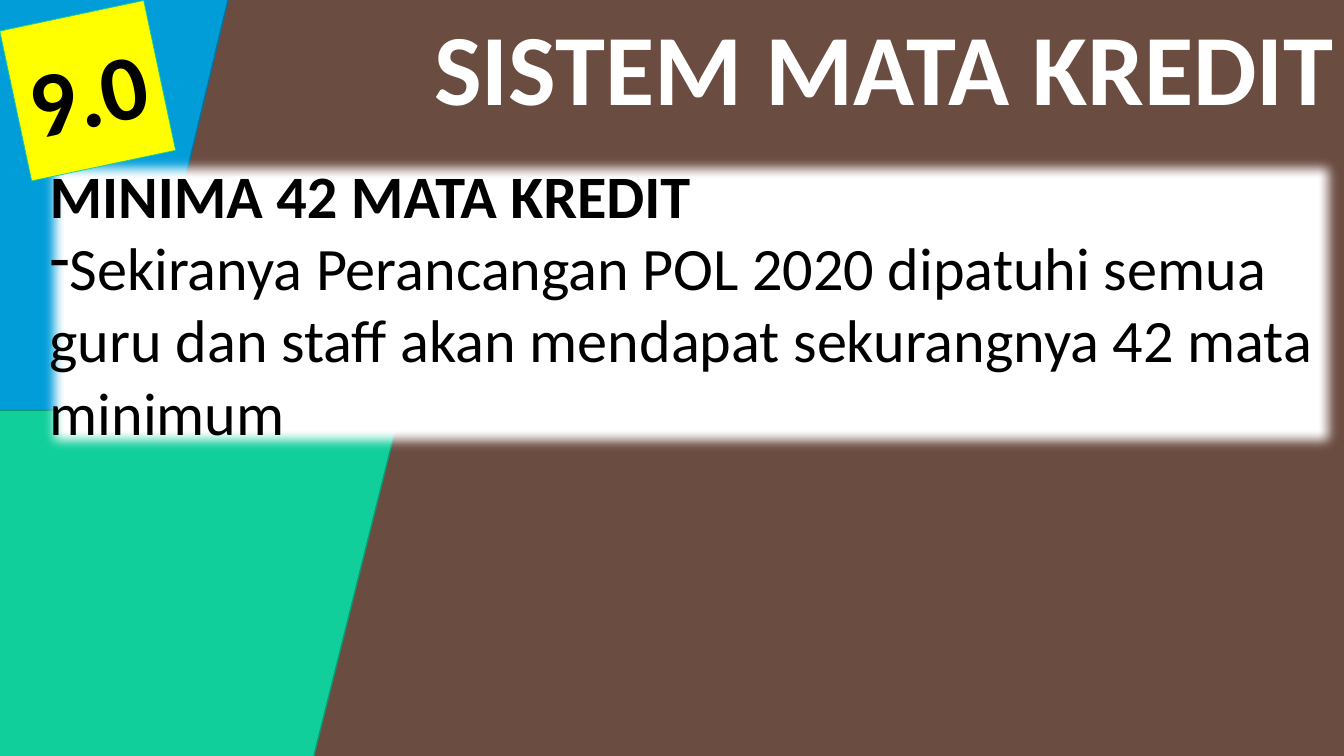
from lxml.etree import SubElement as Sub
from pptx import Presentation as Deck
from pptx.dml.color import RGBColor as Rgb
from pptx.enum.shapes import MSO_SHAPE as Kind
from pptx.enum.text import MSO_ANCHOR as Anchor, PP_ALIGN as Align
from pptx.oxml.ns import qn
from pptx.util import Inches, Pt

WIDE, HIGH = Inches(13.33), Inches(7.5)
HUE = {
    "brown": "6B4C41", "blue": "009DD9", "navy": "0074A1",
    "green": "10CF9B", "moss": "0C9973", "gold": "FFFF00",
    "white": "FFFFFF", "black": "000000",
}


def tint(name):
    return Rgb.from_string(HUE[name])


def area(left, top, width, height):
    sides = (left, WIDE), (top, HIGH), (width, WIDE), (height, HIGH)
    return [round(full * part / 100) for part, full in sides]


def block(slide, place, fill, edge=None, weight=1, kind=Kind.RECTANGLE):
    shape = slide.shapes.add_shape(kind, *area(*place))
    shape.shadow.inherit = False
    shape.fill.solid()
    shape.fill.fore_color.rgb = tint(fill)
    if edge:
        shape.line.color.rgb = tint(edge)
        shape.line.width = Pt(weight)
    else:
        shape.line.fill.background()
    return shape


def write(shape, *lines, size, color="black", align=Align.LEFT,
          anchor=Anchor.TOP, bold=1, mark=None):
    frame = shape.text_frame
    frame.word_wrap = True
    frame.vertical_anchor = anchor
    for spot, line in enumerate(lines):
        para = frame.add_paragraph() if spot else frame.paragraphs[0]
        para.alignment = align
        run = para.add_run()
        run.text = line
        font = run.font
        font.name, font.size, font.bold = "Calibri", Pt(size), spot < bold
        font.color.rgb = tint(color)
        if mark and spot >= bold:
            props = para._p.get_or_add_pPr()
            Sub(props, qn("a:buFontTx"))
            Sub(props, qn("a:buChar"), char=mark)


def soften(shape, size):
    glow = shape._element.spPr.find(qn("a:effectLst"))
    Sub(glow, qn("a:softEdge"), rad=str(Pt(size)))


def main():
    deck = Deck()
    deck.slide_width, deck.slide_height = WIDE, HIGH
    slide = deck.slides.add_slide(deck.slide_layouts[6])
    back = slide.background.fill
    back.solid()
    back.fore_color.rgb = tint("brown")

    bands = [
        ((-33.83, -3.33, 51.24, 95.33), "blue", "navy"),
        ((-14.4, 54.27, 44.19, 76.53), "green", "moss"),
    ]
    for place, fill, edge in bands:
        block(slide, place, fill, edge, kind=Kind.PARALLELOGRAM)

    title = slide.shapes.add_textbox(*area(-21.6, 0, 121.6, 17.47))
    write(title, "SISTEM MATA KREDIT", size=72, color="white",
          align=Align.RIGHT)

    panel = block(slide, (2.95, 20.27, 97.05, 40), "white")
    soften(panel, 10)
    write(panel, "MINIMA 42 MATA KREDIT",
          "Sekiranya Perancangan POL 2020 dipatuhi semua guru dan staff "
          "akan mendapat sekurangnya 42 mata minimum", size=43, mark="-")

    badge = block(slide, (1.05, 1.87, 10.95, 20.27), "gold", "green", 0.5)
    badge.rotation = 348
    write(badge, "9.0", size=66, align=Align.CENTER, anchor=Anchor.MIDDLE)

    deck.save("out.pptx")


if __name__ == "__main__":
    main()
